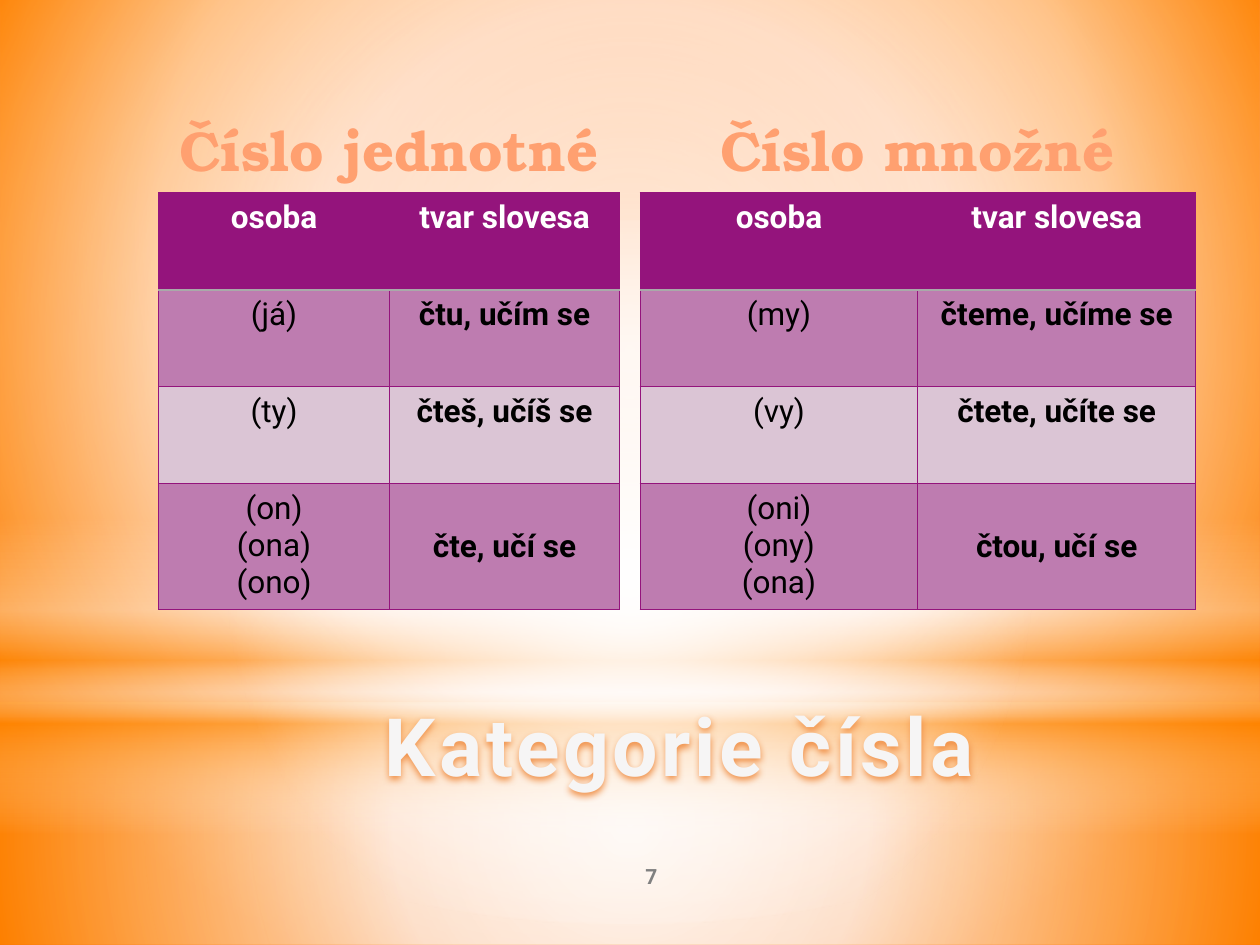
from dataclasses import dataclass
from typing import Optional

from lxml import etree
from pptx import Presentation
from pptx.dml.color import RGBColor
from pptx.enum.shapes import MSO_SHAPE
from pptx.enum.text import MSO_ANCHOR, PP_ALIGN
from pptx.oxml import parse_xml
from pptx.oxml.ns import nsdecls, qn
from pptx.util import Inches, Pt

RECTANGLE, OVAL = MSO_SHAPE.RECTANGLE, MSO_SHAPE.OVAL
TOP, MIDDLE, BOTTOM = MSO_ANCHOR.TOP, MSO_ANCHOR.MIDDLE, MSO_ANCHOR.BOTTOM
CENTER = PP_ALIGN.CENTER

WHITE = RGBColor(0xFF, 0xFF, 0xFF)
BLACK = RGBColor(0x00, 0x00, 0x00)
ORANGE = RGBColor(0xFF, 0x86, 0x00)
PEACH = RGBColor(0xFF, 0xA0, 0x70)
PALE = RGBColor(0xF6, 0xF5, 0xF5)
GRAY = RGBColor(0x80, 0x80, 0x80)
RULE_GRAY = RGBColor(0xA9, 0xA9, 0xA9)
GLOW = RGBColor(0xF0, 0x90, 0x48)
PURPLE = RGBColor(0x94, 0x14, 0x7C)
BAND_DARK = RGBColor(0xBE, 0x7C, 0xB0)
BAND_LIGHT = RGBColor(0xDB, 0xC5, 0xD5)

BODY_FONT, HEADING_FONT = "Roboto", "TeX Gyre Bonum"
ROW_HEIGHTS = (0.77, 0.77, 0.77, 0.98)
CENTERED = (50, 50, 50, 50)


@dataclass
class Stop:
    position: int
    color: RGBColor
    opacity: int = 100


@dataclass
class Layer:
    """A background shape; without a focus its gradient runs downwards."""
    shape_type: MSO_SHAPE
    top: float
    height: float
    stops: tuple[Stop, ...]
    focus: Optional[tuple[int, int, int, int]] = CENTERED


@dataclass
class NumberTable:
    heading: str
    left: float
    width: float
    rows: tuple[tuple[str, str], ...]


BACKGROUND = (Stop(0, RGBColor(0xFF, 0x82, 0x21)), Stop(60, RGBColor(0xFF, 0xCA, 0xA7)),
              Stop(100, RGBColor(0xF8, 0x69, 0x00)))
LAYERS = (
    Layer(RECTANGLE, 5.58, 1.92, (Stop(0, WHITE, 91), Stop(37, WHITE, 76), Stop(100, ORANGE, 79))),
    Layer(RECTANGLE, 0, 5.58, (Stop(0, WHITE, 89), Stop(48, WHITE, 62), Stop(100, ORANGE, 79))),
    Layer(RECTANGLE, 4.12, 2.5, (Stop(0, WHITE, 0), Stop(29, WHITE, 30), Stop(45, ORANGE, 40),
                                 Stop(55, WHITE, 26), Stop(65, ORANGE, 60), Stop(100, WHITE, 0)),
          None),
    Layer(OVAL, 1.75, 5.58, (Stop(0, WHITE), Stop(56, WHITE, 0))),
)
HEADER = ("osoba", "tvar slovesa")
TABLES = (
    NumberTable("Číslo jednotné", 1.26, 3.66,
                (HEADER, ("(já)", "čtu, učím se"), ("(ty)", "čteš, učíš se"),
                 ("(on)\n(ona)\n(ono)", "čte, učí se"))),
    NumberTable("Číslo množné", 5.08, 4.41,
                (HEADER, ("(my)", "čteme, učíme se"), ("(vy)", "čtete, učíte se"),
                 ("(oni)\n(ony)\n(ona)", "čtou, učí se"))),
)


def set_gradient(container, stops: tuple[Stop, ...], focus) -> None:
    """Replace the default gradient of a fill container."""
    stop_xml = "".join(
        f'<a:gs pos="{stop.position * 1000}"><a:srgbClr val="{stop.color}">'
        f'<a:alpha val="{stop.opacity * 1000}"/></a:srgbClr></a:gs>' for stop in stops)
    if focus:
        left, top, right, bottom = (edge * 1000 for edge in focus)
        direction = (f'<a:path path="circle"><a:fillToRect l="{left}" t="{top}" '
                     f'r="{right}" b="{bottom}"/></a:path>')
    else:
        direction = '<a:lin ang="5400000" scaled="0"/>'
    gradient = parse_xml(f'<a:gradFill {nsdecls("a")} rotWithShape="1">'
                         f'<a:gsLst>{stop_xml}</a:gsLst>{direction}</a:gradFill>')
    container.replace(container.find(qn("a:gradFill")), gradient)


def add_layer(slide, layer: Layer) -> None:
    shape = slide.shapes.add_shape(layer.shape_type, 0, Inches(layer.top),
                                   Inches(10), Inches(layer.height))
    shape.shadow.inherit = False
    shape.line.fill.background()
    shape.fill.gradient()
    set_gradient(shape.element.spPr, layer.stops, layer.focus)


def write_text(text_frame, text: str, size: float, color: RGBColor, bold: bool = True,
               font: str = BODY_FONT) -> None:
    text_frame.text = text
    for paragraph in text_frame.paragraphs:
        paragraph.alignment = CENTER
        paragraph.font.name = font
        paragraph.font.size = Pt(size)
        paragraph.font.bold = bold
        paragraph.font.color.rgb = color


def add_label(slide, text: str, left: float, top: float, width: float, height: float,
              anchor: MSO_ANCHOR, size: float, color: RGBColor, font: str = BODY_FONT) -> None:
    text_frame = slide.shapes.add_textbox(Inches(left), Inches(top),
                                          Inches(width), Inches(height)).text_frame
    text_frame.word_wrap = True
    text_frame.vertical_anchor = anchor
    write_text(text_frame, text, size, color, font=font)


def set_border(cell, side: str, color: RGBColor, width: float) -> None:
    line = parse_xml(f'<a:{side} {nsdecls("a")} w="{Pt(width)}"><a:solidFill>'
                     f'<a:srgbClr val="{color}"/></a:solidFill></a:{side}>')
    cell_properties = cell._tc.get_or_add_tcPr()
    borders = cell_properties.findall("*")
    fill_index = next(index for index, child in enumerate(borders)
                      if child.tag == qn("a:solidFill"))
    cell_properties.insert(fill_index, line)


def add_number_table(slide, data: NumberTable) -> None:
    add_label(slide, data.heading, data.left, 0.8, data.width, 0.7, BOTTOM, 32, PEACH,
              HEADING_FONT)
    table = slide.shapes.add_table(len(data.rows), len(HEADER), Inches(data.left), Inches(1.53),
                                   Inches(data.width), Inches(sum(ROW_HEIGHTS))).table
    for row, height in zip(table.rows, ROW_HEIGHTS):
        row.height = Inches(height)
    last_row = len(data.rows) - 1
    for row_index, texts in enumerate(data.rows):
        is_header = row_index == 0
        for column_index, text in enumerate(texts):
            is_verb = column_index == 1
            cell = table.cell(row_index, column_index)
            cell.fill.solid()
            band = BAND_DARK if row_index % 2 else BAND_LIGHT
            cell.fill.fore_color.rgb = PURPLE if is_header else band
            cell.vertical_anchor = MIDDLE if is_verb and row_index == last_row else TOP
            write_text(cell.text_frame, text, 18, WHITE if is_header else BLACK,
                       bold=is_header or is_verb)
            header_rule = (RULE_GRAY, 1.25)
            grid_rule = (PURPLE, 0.75)
            set_border(cell, "lnL", *grid_rule)
            set_border(cell, "lnR", *grid_rule)
            set_border(cell, "lnT", *(header_rule if row_index == 1 else grid_rule))
            set_border(cell, "lnB", *(header_rule if is_header else grid_rule))


def format_title(title) -> None:
    title.left, title.top = Inches(1.38), Inches(4.69)
    title.width, title.height = Inches(8.03), Inches(2.28)
    text_frame = title.text_frame
    text_frame.vertical_anchor = MIDDLE
    text_frame.margin_top = Inches(0.2)
    write_text(text_frame, "Kategorie čísla", 46, PALE)
    # Letter spacing and a soft orange shadow
    text_frame.paragraphs[0].runs[0].font._element.set("spc", "200")
    effects = etree.SubElement(title.element.spPr, qn("a:effectLst"))
    effects.append(parse_xml(
        f'<a:outerShdw {nsdecls("a")} blurRad="{Pt(4)}" dist="{Pt(2)}" dir="5400000">'
        f'<a:srgbClr val="{GLOW}"/></a:outerShdw>'))


def main() -> None:
    presentation = Presentation()
    presentation.slide_width, presentation.slide_height = Inches(10), Inches(7.5)
    slide = presentation.slides.add_slide(presentation.slide_layouts[5])

    # Background and its light layers
    slide.background.fill.gradient()
    set_gradient(slide.element.find(".//" + qn("p:bgPr")), BACKGROUND, (20, 10, 20, 60))
    for layer in LAYERS:
        add_layer(slide, layer)

    # Singular and plural tables
    for data in TABLES:
        add_number_table(slide, data)

    # Title in front of the layers, then the slide number
    title = slide.shapes.title
    title.element.getparent().append(title.element)
    format_title(title)
    add_label(slide, "7", 4.17, 6.75, 2, 0.4, MIDDLE, 12, GRAY)

    presentation.save("out.pptx")


if __name__ == "__main__":
    main()
